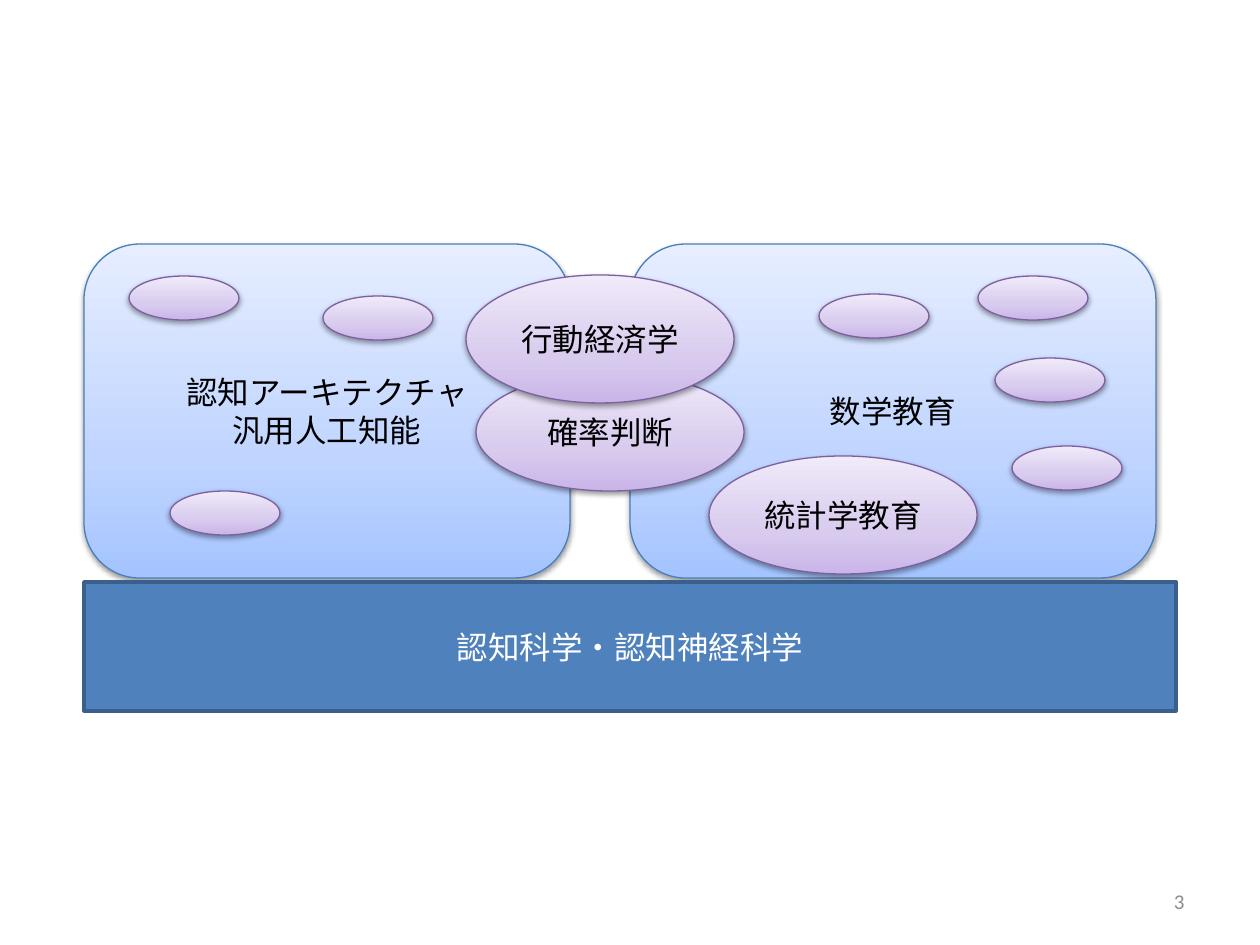
import copy
import pptx
import pptx.util
import pptx.oxml
import pptx.oxml.ns
import pptx.dml.color
import pptx.enum.shapes
import pptx.enum.text

KIND = pptx.enum.shapes.MSO_SHAPE
ALIGN = pptx.enum.text.PP_ALIGN
MID = pptx.enum.text.MSO_ANCHOR.MIDDLE
COLORS = {
    "black": "000000", "white": "FFFFFF", "gray": "8C8C8C",
    "base": "4F81BD", "edge": "3A5F8C",
    "blue": "4B7EBC", "plum": "7D60A0",
}
FADES = {
    "blue": ("A4C4FF", "BFD4FF", "E6EEFF"),
    "plum": ("C9B5E8", "D8CBEE", "F0EAF9"),
}
STOPS = (0, 0.35, 1)
SHADOW = (
    '<a:outerShdw xmlns:a="http://schemas.openxmlformats.org/drawingml/2006/main" '
    'blurRad="40000" dist="20000" dir="5400000" rotWithShape="0">'
    '<a:srgbClr val="000000"><a:alpha val="38000"/></a:srgbClr></a:outerShdw>'
)


def px(num):
    return pptx.util.Inches(num / 126)


def rgb(code):
    return pptx.dml.color.RGBColor.from_string(code)


class Board:
    def __init__(self, slide, face="Calibri"):
        self.slide = slide
        self.face = face

    def letter(self, shape, text, color="black", size=18, align=ALIGN.CENTER):
        frame = shape.text_frame
        for key, value in {"word_wrap": True, "vertical_anchor": MID}.items():
            setattr(frame, key, value)
        frame.text = text
        style = {"name": self.face, "size": pptx.util.Pt(size)}
        for para in frame.paragraphs:
            para.alignment = align
            for key, value in style.items():
                setattr(para.font, key, value)
            para.font.color.rgb = rgb(COLORS[color])

    def shape(self, kind, box, edge, width):
        shape = self.slide.shapes.add_shape(kind, *map(px, box))
        shape.shadow.inherit = False
        shape.line.color.rgb = rgb(COLORS[edge])
        shape.line.width = pptx.util.Pt(width)
        return shape

    def block(self, box, text):
        shape = self.shape(KIND.RECTANGLE, box, "edge", 2)
        shape.fill.solid()
        shape.fill.fore_color.rgb = rgb(COLORS["base"])
        self.letter(shape, text, "white")

    def glow(self, kind, box, tone, text=""):
        shape = self.shape(kind, box, tone, 0.75)
        shape.fill.gradient()
        shape.fill.gradient_angle = 90
        props = shape._element.spPr
        group = props.find(".//" + pptx.oxml.ns.qn("a:gsLst"))
        group.append(copy.deepcopy(group[0]))
        for stop, place, code in zip(shape.fill.gradient_stops, STOPS, FADES[tone]):
            stop.position = place
            stop.color.rgb = rgb(code)
        effect = props.find(pptx.oxml.ns.qn("a:effectLst"))
        effect.append(pptx.oxml.parse_xml(SHADOW))
        if text:
            self.letter(shape, text)

    def panel(self, box, text):
        self.glow(KIND.ROUNDED_RECTANGLE, box, "blue", text)

    def oval(self, box, text=""):
        self.glow(KIND.OVAL, box, "plum", text)

    def label(self, box, text, color, size, align):
        self.letter(self.slide.shapes.add_textbox(*map(px, box)), text, color, size, align)


def main():
    deck = pptx.Presentation()
    deck.slide_width, deck.slide_height = px(1260), px(945)
    board = Board(deck.slides.add_slide(deck.slide_layouts[6]))

    board.label((903, 876, 294, 50), "3", "gray", 12, ALIGN.RIGHT)
    board.panel((84, 244, 486, 334), "認知アーキテクチャ\n汎用人工知能")
    board.panel((630, 244, 526, 334), "数学教育")
    board.block((84, 582, 1092, 129), "認知科学・認知神経科学")

    topics = (
        (476, 373, 118, "確率判断"),
        (709, 456, 118, "統計学教育"),
        (466, 275, 128, "行動経済学"),
    )
    for left, top, high, text in topics:
        board.oval((left, top, 268, high), text)

    spots = (
        (819, 294), (978, 276), (995, 358), (1012, 446),
        (129, 276), (170, 491), (323, 296),
    )
    for left, top in spots:
        board.oval((left, top, 110, 44))

    deck.save("out.pptx")


if __name__ == "__main__":
    main()
